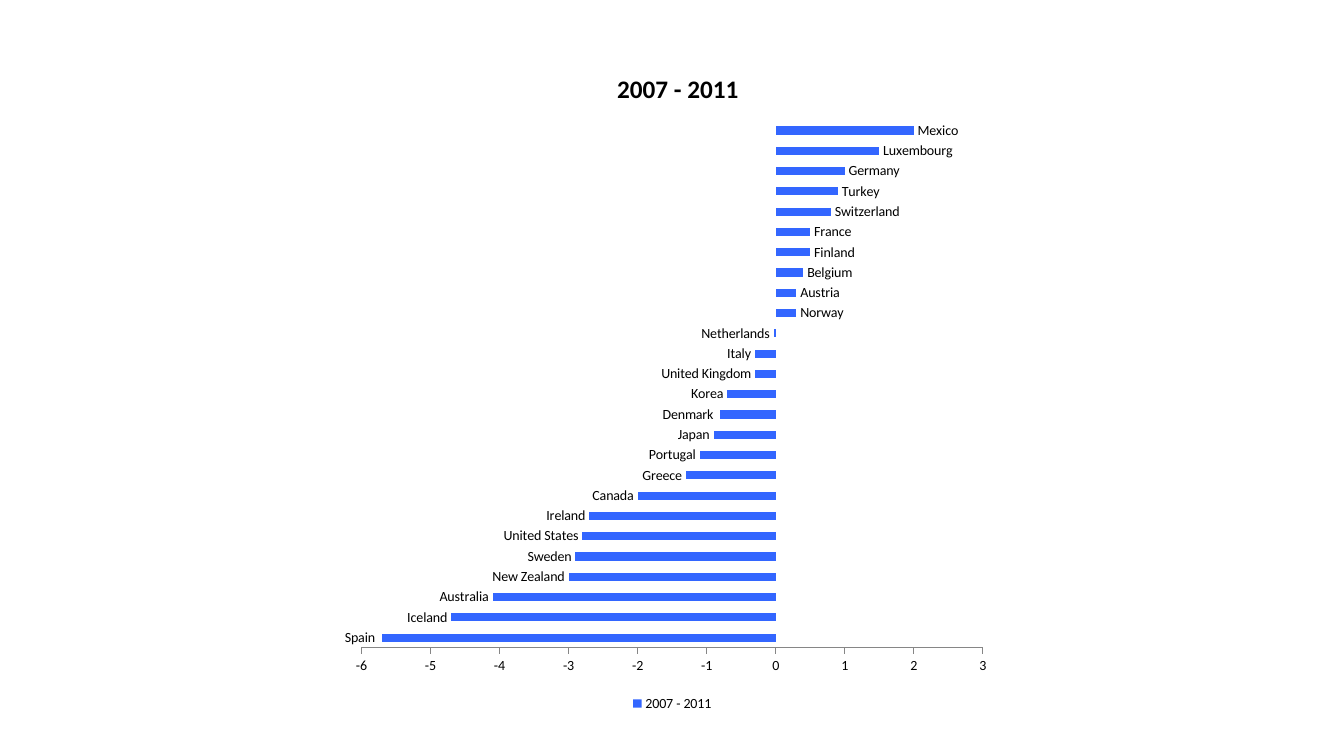
from pptx import Presentation
from pptx.chart.data import CategoryChartData
from pptx.dml.color import RGBColor
from pptx.enum import chart as ch
from pptx.oxml import parse_xml
from pptx.oxml.ns import nsdecls, qn
from pptx.util import Cm, Pt

BLUE = RGBColor(0x33, 0x66, 0xFF)
BLACK = RGBColor(0, 0, 0)
GREY = RGBColor(0x86, 0x86, 0x86)
FONT = "Calibri"
PERIOD = "2007 - 2011"
RATES = [
    ("Spain ", -5.7), ("Iceland", -4.7), ("Australia", -4.1),
    ("New Zealand", -3), ("Sweden", -2.9), ("United States", -2.8),
    ("Ireland", -2.7), ("Canada", -2), ("Greece", -1.3),
    ("Portugal", -1.1), ("Japan", -0.9), ("Denmark ", -0.8),
    ("Korea", -0.7), ("United Kingdom", -0.3), ("Italy", -0.3),
    ("Netherlands", -0.03), ("Norway", 0.3), ("Austria", 0.3),
    ("Belgium", 0.4), ("Finland", 0.5), ("France ", 0.5),
    ("Switzerland", 0.8), ("Turkey", 0.9), ("Germany ", 1),
    ("Luxembourg", 1.5), ("Mexico", 2),
]


def style(font, size, bold=False):
    font.name = FONT
    font.size = Pt(size)
    font.bold = bold
    font.color.rgb = BLACK


def place(item, index, **sides):
    """Give a chart item a manual layout, in fractions of the chart."""
    for old in item.findall(qn("c:layout")):
        item.remove(old)
    inner = '<c:layoutTarget val="inner"/>' if "w" in sides else ""
    modes = "".join(f'<c:{s}Mode val="edge"/>' for s in "xy")
    spots = "".join(f'<c:{s} val="{v}"/>' for s, v in sides.items())
    item.insert(index, parse_xml(
        f'<c:layout {nsdecls("c")}><c:manualLayout>{inner}{modes}{spots}'
        '</c:manualLayout></c:layout>'))


def add_bars(slide):
    data = CategoryChartData(number_format="0.0")
    data.categories = [land for land, _ in RATES]
    data.add_series(PERIOD, [rate for _, rate in RATES])
    frame = slide.shapes.add_chart(
        ch.XL_CHART_TYPE.BAR_CLUSTERED,
        Cm(8.61), Cm(0.99), Cm(16.66), Cm(17.04), data)
    chart = frame.chart
    style(chart.font, 10)
    plot = chart.plots[0]
    plot.gap_width = 150
    plot.vary_by_categories = False
    bars = plot.series[0]
    bars.invert_if_negative = False
    bars.format.fill.solid()
    bars.format.fill.fore_color.rgb = BLUE
    tags = bars.data_labels
    tags.show_value = False
    tags.show_category_name = True
    tags.position = ch.XL_LABEL_POSITION.OUTSIDE_END
    style(tags.font, 10)
    return chart


def set_title(chart):
    chart.has_title = True
    run = chart.chart_title.text_frame.paragraphs[0].add_run()
    run.text = PERIOD
    style(run.font, 18, True)


def set_axes(chart):
    chart.category_axis.visible = False
    axis = chart.value_axis
    axis.minimum_scale, axis.maximum_scale, axis.major_unit = -6, 3, 1
    axis.has_major_gridlines = False
    axis.major_tick_mark = ch.XL_TICK_MARK.OUTSIDE
    axis.tick_labels.number_format = "0"
    axis.tick_labels.number_format_is_linked = False
    axis.format.line.color.rgb = GREY
    axis.format.line.width = Pt(0.75)


def set_legend(chart):
    chart.has_legend = True
    chart.legend.position = ch.XL_LEGEND_POSITION.BOTTOM
    chart.legend.include_in_layout = False
    style(chart.legend.font, 10)


def main():
    deck = Presentation()
    deck.slide_width, deck.slide_height = Cm(33.87), Cm(19.05)
    slide = deck.slides.add_slide(deck.slide_layouts[6])
    chart = add_bars(slide)
    set_title(chart)
    set_axes(chart)
    set_legend(chart)
    root = chart.element.find(qn("c:chart"))
    place(root.find(qn("c:title")), 1, x=0.41, y=0.04)
    place(root.find(qn("c:plotArea")), 0, x=0.03, y=0.12, w=0.94, h=0.78)
    deck.save("out.pptx")


if __name__ == "__main__":
    main()
